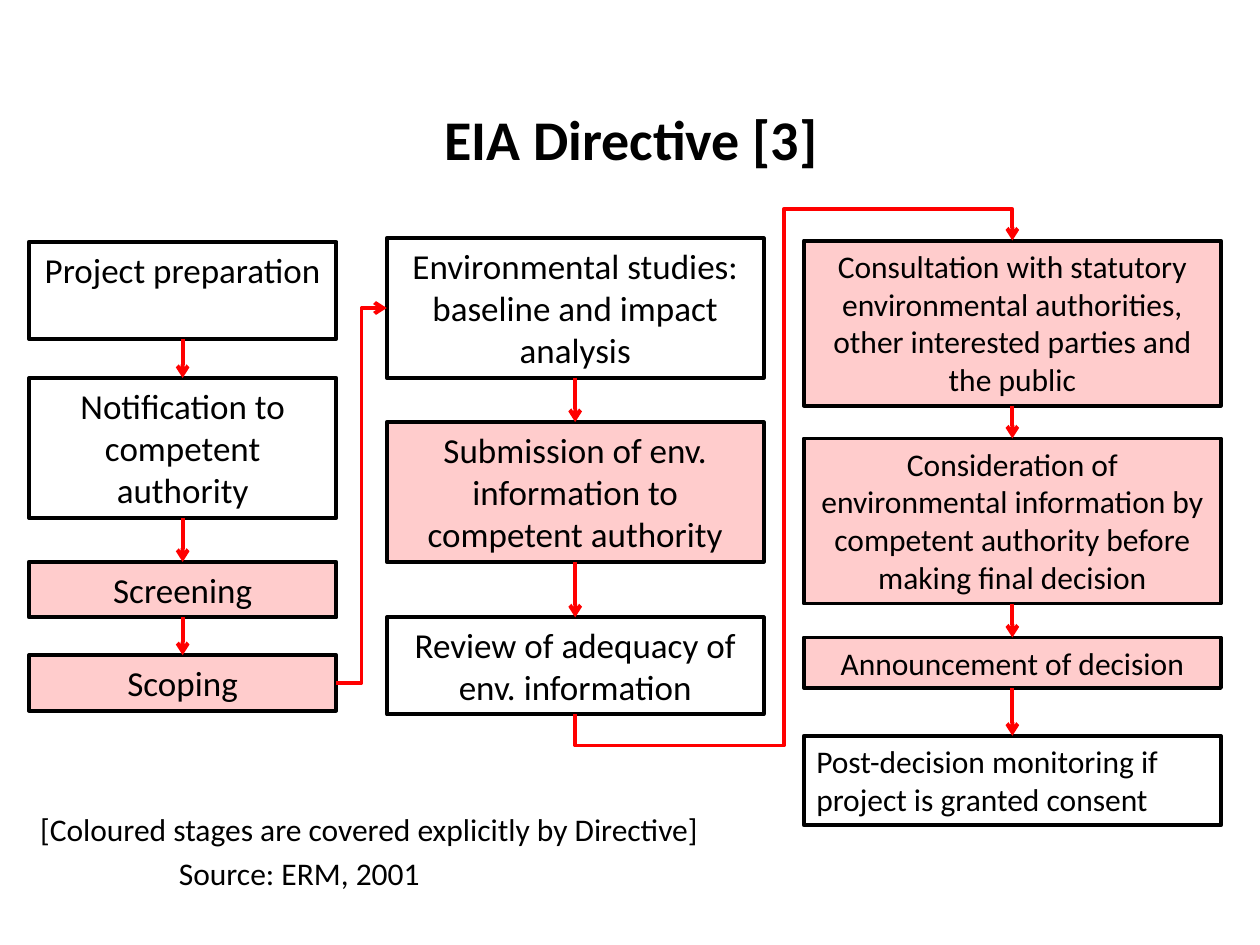
from itertools import pairwise

from lxml import etree
from pptx import Presentation
from pptx.dml.color import RGBColor
from pptx.enum.shapes import MSO_CONNECTOR, MSO_SHAPE
from pptx.enum.text import MSO_ANCHOR, PP_ALIGN
from pptx.oxml.ns import qn
from pptx.util import Inches, Pt

COLORS = {"text": "000000", "border": "000000", "covered": "FFCCCC", "arrow": "FF0000"}
TOP, LEFT, BOTTOM, RIGHT = range(4)

# Each column: left, width, text size, stages (top, height, text, covered by Directive)
COLUMNS = [
    (2.3, 24.4, 20, [
        (19.2, 7.7, "Project preparation", False),
        (30, 11.1, "Notification to competent authority", False),
        (44.6, 4.4, "Screening", True),
        (52, 4.4, "Scoping", True),
    ]),
    (30.7, 29.9, 20, [
        (18.9, 11.1, "Environmental studies: baseline and impact analysis", False),
        (33.5, 11.1, "Submission of env. information to competent authority", True),
        (49, 7.7, "Review of adequacy of env. information", False),
    ]),
    (63.8, 33.1, 18, [
        (19.1, 13.1, "Consultation with statutory environmental authorities, "
                     "other interested parties and the public", True),
        (34.8, 13.1, "Consideration of environmental information by competent "
                     "authority before making final decision", True),
        (50.6, 4, "Announcement of decision", True),
        (58.4, 7.1, "Post-decision monitoring if project is granted consent", False),
    ]),
]


def cells(n):
    """Length of n grid cells; the slide is 100 columns by 75 rows."""
    return Inches(n / 10)


def rgb(name):
    return RGBColor.from_string(COLORS[name])


class FlowSlide:
    font = "Calibri"
    line_width = Pt(2.25)

    def __init__(self, prs):
        self.s = prs.slides.add_slide(prs.slide_layouts[5])

    def set_text(self, sp, text, size, align, bold=False, wrap=True, anchor=MSO_ANCHOR.TOP):
        tf = sp.text_frame
        tf.text = text
        tf.word_wrap = wrap
        tf.vertical_anchor = anchor
        p = tf.paragraphs[0]
        p.alignment = align
        p.font.name = self.font
        p.font.size = Pt(size)
        p.font.bold = bold
        p.font.color.rgb = rgb("text")

    def title(self, text, x, y, w, h):
        sp = self.s.shapes.title
        sp.left, sp.top, sp.width, sp.height = map(cells, (x, y, w, h))
        self.set_text(sp, text, 32, PP_ALIGN.CENTER, bold=True, anchor=MSO_ANCHOR.MIDDLE)

    def note(self, text, x, y, w, h, align=PP_ALIGN.LEFT, wrap=True):
        sp = self.s.shapes.add_textbox(*map(cells, (x, y, w, h)))
        self.set_text(sp, text, 18, align, wrap=wrap)

    def stage(self, text, x, y, w, h, size, covered, align):
        sp = self.s.shapes.add_shape(MSO_SHAPE.RECTANGLE, *map(cells, (x, y, w, h)))
        sp.shadow.inherit = False
        if covered:
            sp.fill.solid()
            sp.fill.fore_color.rgb = rgb("covered")
        else:
            sp.fill.background()
        sp.line.color.rgb = rgb("border")
        sp.line.width = self.line_width
        self.set_text(sp, text, size, align)
        return sp

    def arrow(self, start, end, start_side=BOTTOM, end_side=TOP, kind=MSO_CONNECTOR.STRAIGHT):
        c = self.s.shapes.add_connector(kind, 0, 0, 0, 0)
        c.begin_connect(start, start_side)
        c.end_connect(end, end_side)
        c.line.color.rgb = rgb("arrow")
        c.line.width = self.line_width
        props = c.element.spPr
        etree.SubElement(props.find(qn("a:ln")), qn("a:tailEnd"), type="arrow")
        etree.SubElement(props, qn("a:effectLst"))
        return c

    def loop_arrow(self, start, end):
        """Arrow leaving below start, rising between the columns, entering end from above."""
        c = self.arrow(start, end, kind=MSO_CONNECTOR.ELBOW)
        left, top, w, h = c.left, c.top, c.width, c.height
        # The five-part elbow is defined sideways, so its box is turned a quarter
        c.left, c.top = left + (w - h) // 2, top + (h - w) // 2
        c.width, c.height = h, w
        props = c.element.spPr
        xfrm = props.find(qn("a:xfrm"))
        for key, value in (("rot", "5400000"), ("flipH", "1"), ("flipV", "1")):
            xfrm.set(key, value)
        geom = props.find(qn("a:prstGeom"))
        geom.set("prst", "bentConnector5")
        guides = geom.find(qn("a:avLst"))
        for i, share in enumerate((-6600, 47700, 106600), 1):
            etree.SubElement(guides, qn("a:gd"), name=f"adj{i}", fmla=f"val {share}")


def main():
    prs = Presentation()
    prs.slide_width, prs.slide_height = cells(100), cells(75)
    slide = FlowSlide(prs)
    slide.title("EIA Directive [3]", 5.1, 7.1, 90, 7.8)
    slide.note("[Coloured stages are covered explicitly by Directive]",
               2.2, 63.8, 54.9, 4, wrap=False)
    slide.note("Source: ERM, 2001", 9.1, 67.3, 25.2, 4, PP_ALIGN.RIGHT)

    chains = []
    for x, w, size, stages in COLUMNS:
        chain = []
        for y, h, text, covered in stages:
            align = PP_ALIGN.LEFT if text.startswith("Post") else PP_ALIGN.CENTER
            chain.append(slide.stage(text, x, y, w, h, size, covered, align))
        for start, end in pairwise(chain):
            slide.arrow(start, end)
        chains.append(chain)

    preparation, review, decision = chains
    slide.arrow(preparation[-1], review[0], RIGHT, LEFT, MSO_CONNECTOR.ELBOW)
    slide.loop_arrow(review[-1], decision[0])
    prs.save("out.pptx")


if __name__ == "__main__":
    main()
